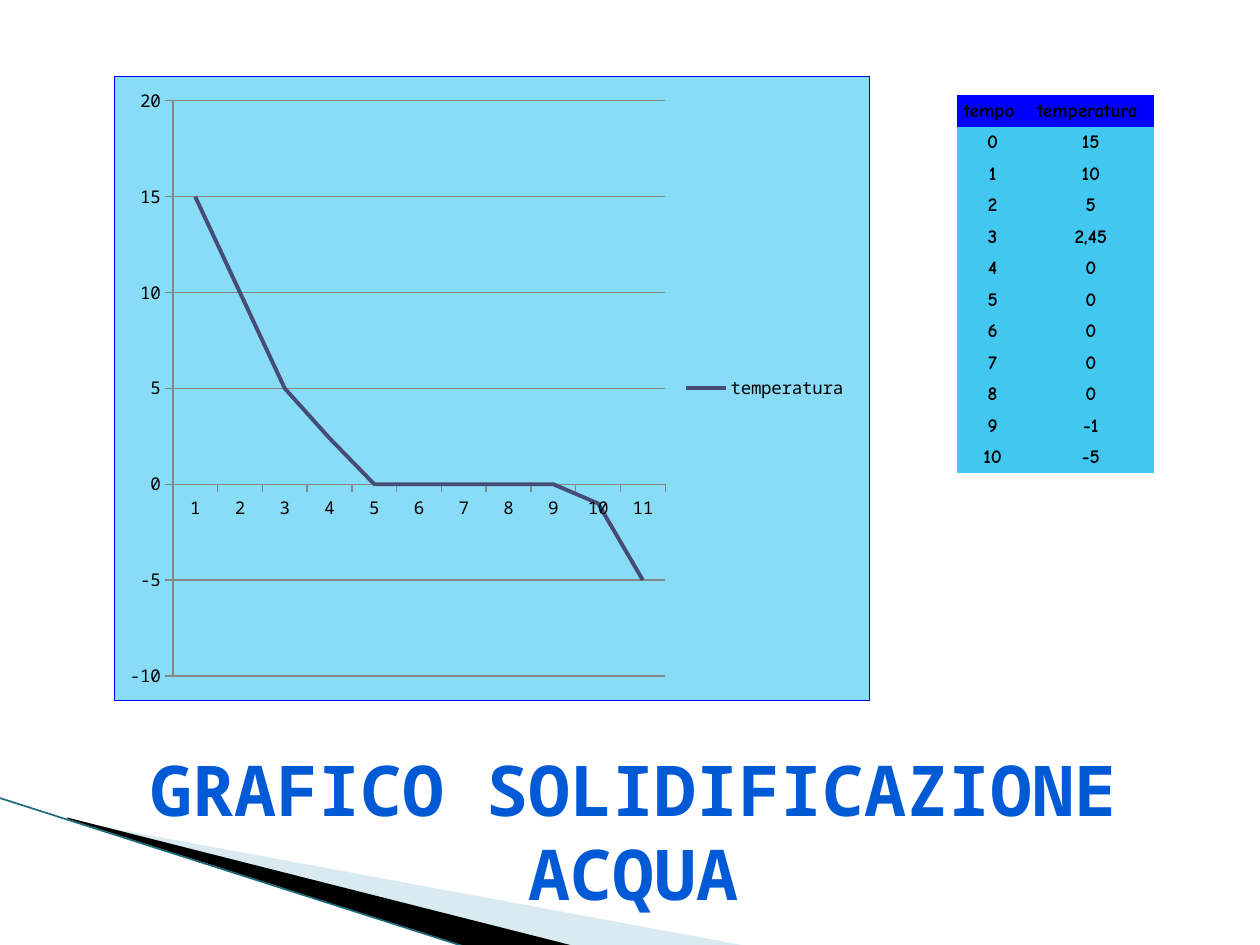
from lxml.etree import SubElement
from pptx import Presentation
from pptx.chart.data import CategoryChartData
from pptx.dml.color import RGBColor
from pptx.enum.chart import XL_CHART_TYPE as ChartType, XL_LEGEND_POSITION as LegendPosition
from pptx.enum.chart import XL_MARKER_STYLE as Marker, XL_TICK_MARK as TickMark
from pptx.enum.shapes import MSO_CONNECTOR as Connector
from pptx.enum.text import MSO_ANCHOR as Anchor, MSO_AUTO_SIZE as AutoSize, PP_ALIGN as Align
from pptx.oxml import parse_xml
from pptx.oxml.ns import nsdecls, qn
from pptx.util import Cm, Pt

MONO = "Noto Sans Mono"
HAND = "Comic Neue"
BLACK, BLUE, SKY, GREY = "000000", "0000FF", "42C7F1", "868686"

HEADINGS = ("tempo ", "temperatura ")
TEMPERATURES = ("15", "10", "5", "2,45", "0", "0", "0", "0", "0", "-1", "-5")
CURVE_VALUES = (15, 10, 5, 2.4, 0, 0, 0, 0, 0, -1, -5)


def rgb(value):
    return RGBColor.from_string(value)


def set_alpha(fill_parent, percent):
    color = fill_parent.find(".//" + qn("a:srgbClr"))
    SubElement(color, qn("a:alpha")).set("val", str(percent * 1000))


def hide_borders(cell):
    properties = cell._tc.get_or_add_tcPr()
    for position, side in enumerate("LRTB"):
        border = parse_xml(f'<a:ln{side} {nsdecls("a")} w="0"><a:noFill/></a:ln{side}>')
        properties.insert(position, border)


class SlideBuilder:
    def __init__(self, slide):
        self.slide = slide
        self.shapes = slide.shapes

    def style_font(self, font, name, size, color, bold=False):
        font.name, font.size, font.bold = name, Pt(size), bold
        font.color.rgb = rgb(color)

    def wedge(self, points, color, alpha=None):
        start, *rest = [(Cm(x), Cm(y)) for x, y in points]
        builder = self.shapes.build_freeform(*start)
        builder.add_line_segments(rest, close=True)
        wedge = builder.convert_to_shape()
        wedge.shadow.inherit = False
        wedge.fill.solid()
        wedge.fill.fore_color.rgb = rgb(color)
        wedge.line.fill.background()
        if alpha:
            set_alpha(wedge.element.spPr, alpha)

    def line(self, start, end, color, width):
        ends = [Cm(value) for value in (*start, *end)]
        edge = self.shapes.add_connector(Connector.STRAIGHT, *ends)
        edge.line.color.rgb = rgb(color)
        edge.line.width = Pt(width)
        SubElement(edge.element.spPr, qn("a:effectLst"))

    def table(self, left, top, widths, height, rows):
        frame = self.shapes.add_table(
            len(rows), len(widths), Cm(left), Cm(top), Cm(sum(widths)), Cm(height))
        readings = frame.table
        for column, width in zip(readings.columns, widths):
            column.width = Cm(width)
        for r, row in enumerate(rows):
            for c, text in enumerate(row):
                cell = readings.cell(r, c)
                cell.fill.solid()
                cell.fill.fore_color.rgb = rgb(SKY if r else BLUE)
                hide_borders(cell)
                cell.vertical_anchor = Anchor.MIDDLE
                cell.margin_left = cell.margin_right = 0
                cell.margin_top = cell.margin_bottom = 0
                cell.text = text
                paragraph = cell.text_frame.paragraphs[0]
                paragraph.alignment = Align.CENTER
                self.style_font(paragraph.font, HAND, 11, BLACK, True)

    def line_chart(self, left, top, width, height, name, values):
        data = CategoryChartData()
        data.categories = [str(n + 1) for n in range(len(values))]
        data.add_series(name, values)
        chart = self.shapes.add_chart(
            ChartType.LINE, Cm(left), Cm(top), Cm(width), Cm(height), data).chart
        self.style_font(chart.font, MONO, 10, BLACK)
        chart.has_title = False
        chart.has_legend = True
        chart.legend.position = LegendPosition.RIGHT
        chart.legend.include_in_layout = False
        self.style_font(chart.legend.font, MONO, 10, BLACK)

        plot = chart.plots[0]
        plot.vary_by_categories = False
        curve = plot.series[0]
        curve.smooth = False
        curve.marker.style = Marker.NONE
        curve.format.line.color.rgb = rgb("474B78")
        curve.format.line.width = Pt(2.25)

        scale = chart.value_axis
        scale.minimum_scale, scale.maximum_scale, scale.major_unit = -10, 20, 5
        scale.has_major_gridlines = True
        for axis in (chart.category_axis, scale):
            axis.major_tick_mark = TickMark.OUTSIDE
            axis.format.line.color.rgb = rgb(GREY)
        scale.major_gridlines.format.line.color.rgb = rgb(GREY)

        background = parse_xml(
            f'<c:spPr {nsdecls("c", "a")}>'
            f'<a:solidFill><a:srgbClr val="{SKY}"/></a:solidFill>'
            f'<a:ln w="{Pt(0.75)}"><a:solidFill><a:srgbClr val="{BLUE}"/></a:solidFill></a:ln>'
            '</c:spPr>')
        set_alpha(background, 62)
        chart.element.find(qn("c:chart")).addnext(background)

    def title(self, left, top, width, height, text):
        title = self.shapes.title
        title.left, title.top = Cm(left), Cm(top)
        title.width, title.height = Cm(width), Cm(height)
        frame = title.text_frame
        frame.text = text
        frame.word_wrap = True
        frame.auto_size = AutoSize.SHAPE_TO_FIT_TEXT
        frame.vertical_anchor = Anchor.TOP
        paragraph = frame.paragraphs[0]
        paragraph.alignment = Align.CENTER
        paragraph.line_spacing = 1.0
        self.style_font(paragraph.font, MONO, 40, "005AD6", True)
        title.element.getparent().append(title.element)


def main():
    presentation = Presentation()
    presentation.slide_width, presentation.slide_height = Cm(25.4), Cm(19.05)
    page = SlideBuilder(presentation.slides.add_slide(presentation.slide_layouts[5]))

    page.wedge([(1.4, 16.54), (15.11, 19.08), (11.58, 19.08), (1.4, 16.51)], "A0CBDC", 40)
    page.wedge([(1.35, 16.48), (11.61, 19.08), (9.45, 19.1), (1.37, 16.51)], BLACK)
    page.line((-0.03, 16.08), (9.42, 19.1), "1B6B7B", 0.95)

    readings = [(str(time), value) for time, value in enumerate(TEMPERATURES)]
    page.table(19.3, 1.92, (1.42, 2.54), 7.62, [HEADINGS, *readings])
    page.line_chart(2.3, 1.53, 15.24, 12.6, HEADINGS[1], CURVE_VALUES)
    page.title(0.5, 14.92, 24.54, 1.96, "GRAFICO SOLIDIFICAZIONE ACQUA")

    presentation.save("out.pptx")


if __name__ == "__main__":
    main()
